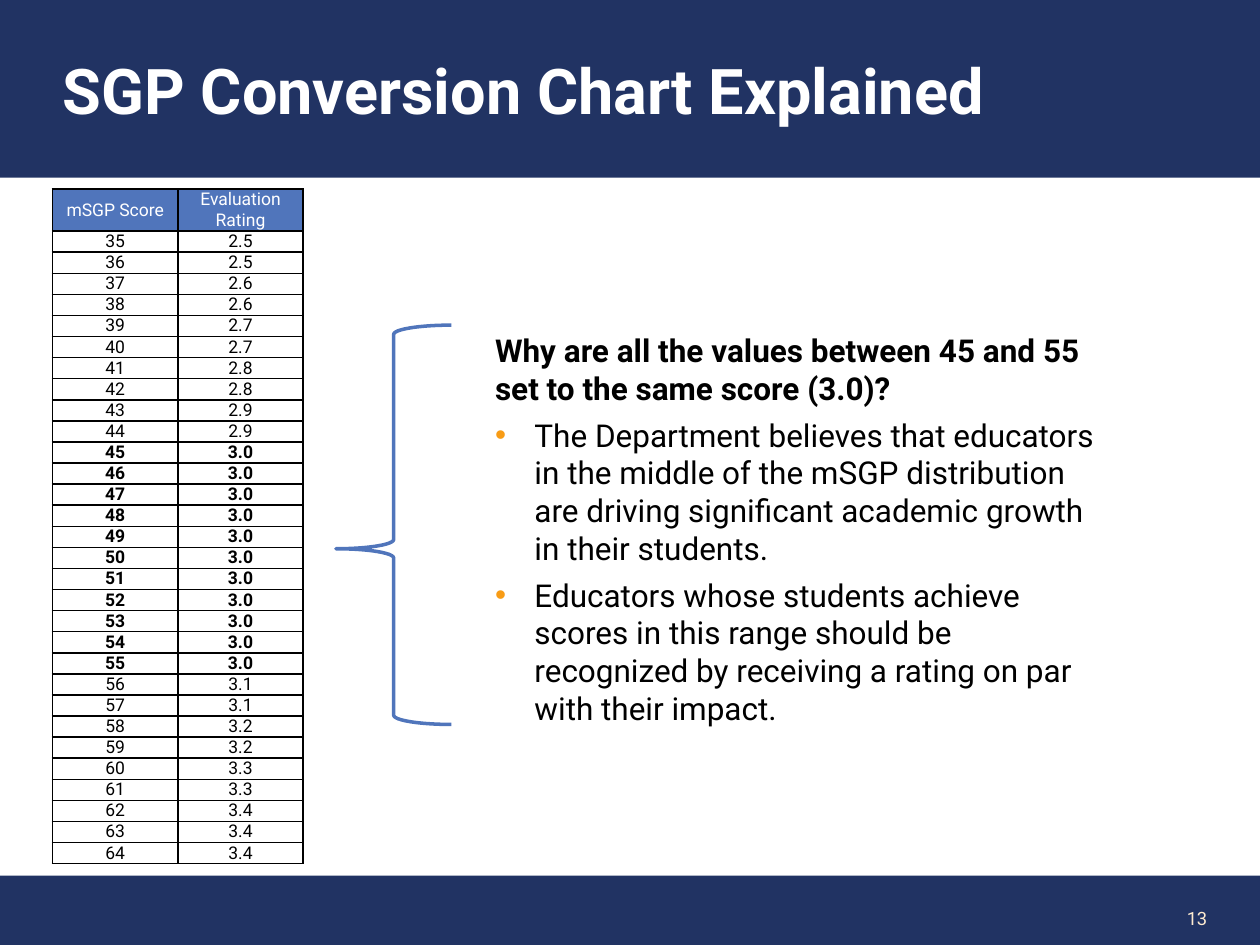
from pptx import Presentation
from pptx.dml.color import RGBColor
from pptx.enum.shapes import MSO_SHAPE
from pptx.enum.text import MSO_ANCHOR, PP_ALIGN
from pptx.oxml import parse_xml
from pptx.oxml.ns import nsdecls
from pptx.util import Pt

RECTANGLE, LEFT_BRACE = MSO_SHAPE.RECTANGLE, MSO_SHAPE.LEFT_BRACE
MIDDLE, TOP = MSO_ANCHOR.MIDDLE, MSO_ANCHOR.TOP
LEFT, CENTER, RIGHT = PP_ALIGN.LEFT, PP_ALIGN.CENTER, PP_ALIGN.RIGHT

FONT = "Roboto"
NAVY, BLUE, ORANGE, CREAM = "213363", "5075BB", "F89C15", "FEEBD0"
BLACK, WHITE = "000000", "FFFFFF"

FIRST_SCORE = 35
RATINGS = (["2.5"] * 2 + ["2.6"] * 2 + ["2.7"] * 2 + ["2.8"] * 2 + ["2.9"] * 2
           + ["3.0"] * 11 + ["3.1"] * 2 + ["3.2"] * 2 + ["3.3"] * 2 + ["3.4"] * 3)
QUESTION = "Why are all the values between 45 and 55 set to the same score (3.0)?"
ANSWERS = [
    "The Department believes that educators in the middle of the mSGP distribution "
    "are driving significant academic growth in their students.",
    "Educators whose students achieve scores in this range should be recognized by "
    "receiving a rating on par with their impact.",
]


def color(value):
    return RGBColor.from_string(value)


def points(box):
    return [Pt(length) for length in box]


def write(paragraph, text, size, fill=BLACK, bold=False, align=LEFT, before=0):
    paragraph.alignment = align
    paragraph.space_before = Pt(before)
    run = paragraph.add_run()
    run.text = text
    font = run.font
    font.name, font.size, font.bold = FONT, Pt(size), bold
    font.color.rgb = color(fill)


def add_bullet(paragraph, indent):
    properties = paragraph._p.get_or_add_pPr()
    properties.set("marL", str(Pt(indent)))
    properties.set("indent", str(-Pt(indent)))
    properties.append(parse_xml(
        f'<a:buClr {nsdecls("a")}><a:srgbClr val="{ORANGE}"/></a:buClr>'))
    properties.append(parse_xml(f'<a:buFont {nsdecls("a")} typeface="Arial"/>'))
    properties.append(parse_xml(f'<a:buChar {nsdecls("a")} char="•"/>'))


def add_borders(cell):
    properties = cell._tc.get_or_add_tcPr()
    for position, side in enumerate(("lnL", "lnR", "lnT", "lnB")):
        properties.insert(position, parse_xml(
            f'<a:{side} {nsdecls("a")} w="{Pt(1)}"><a:solidFill>'
            f'<a:srgbClr val="{BLACK}"/></a:solidFill></a:{side}>'))


def add_band(slide, box):
    band = slide.shapes.add_shape(RECTANGLE, *points(box))
    band.shadow.inherit = False
    band.fill.solid()
    band.fill.fore_color.rgb = color(NAVY)
    band.line.fill.background()
    return band


def add_text_box(slide, box, anchor=TOP):
    frame = slide.shapes.add_textbox(*points(box)).text_frame
    frame.word_wrap = True
    frame.vertical_anchor = anchor
    return frame


def add_title(slide, box):
    frame = add_band(slide, box).text_frame
    frame.word_wrap = True
    frame.vertical_anchor = MIDDLE
    frame.margin_left = Pt(36)
    write(frame.paragraphs[0], "SGP Conversion Chart Explained", 36, WHITE, bold=True)


def add_footer(slide, box):
    add_band(slide, box)
    frame = add_text_box(slide, (592, box[1] + 10, 105, 29), MIDDLE)
    write(frame.paragraphs[0], "13", 10.5, CREAM, align=RIGHT)


def add_score_table(slide, box):
    rows = [("mSGP Score", "Evaluation Rating")]
    rows += [(str(score), rating) for score, rating in enumerate(RATINGS, FIRST_SCORE)]
    table = slide.shapes.add_table(len(rows), 2, *points(box)).table
    row_height = box[3] / (len(rows) + 1)  # the header is two rows high
    for column in table.columns:
        column.width = Pt(box[2] / 2)
    for row_index, values in enumerate(rows):
        header = row_index == 0
        table.rows[row_index].height = Pt(row_height * (2 if header else 1))
        for column_index, value in enumerate(values):
            cell = table.cell(row_index, column_index)
            cell.margin_left = cell.margin_right = Pt(5)
            cell.margin_top = cell.margin_bottom = 0
            cell.vertical_anchor = MIDDLE
            if header:
                cell.fill.solid()
                cell.fill.fore_color.rgb = color(BLUE)
            else:
                cell.fill.background()
            add_borders(cell)
            write(cell.text_frame.paragraphs[0], value, 10, WHITE if header else BLACK,
                  bold=values[1] == "3.0", align=CENTER)


def add_brace(slide, box):
    brace = slide.shapes.add_shape(LEFT_BRACE, *points(box))
    brace.shadow.inherit = False
    brace.adjustments[0], brace.adjustments[1] = 0.08, 0.56
    brace.fill.background()
    brace.line.color.rgb = color(BLUE)
    brace.line.width = Pt(2)


def add_explanation(slide, box):
    frame = add_text_box(slide, box)
    write(frame.paragraphs[0], QUESTION, 18, bold=True)
    for answer in ANSWERS:
        paragraph = frame.add_paragraph()
        add_bullet(paragraph, 22.5)
        write(paragraph, answer, 18, before=5)


def main():
    presentation = Presentation()
    presentation.slide_width, presentation.slide_height = Pt(720), Pt(540)
    slide = presentation.slides.add_slide(presentation.slide_layouts[6])
    add_footer(slide, (0, 500.4, 721.4, 42.5))
    add_title(slide, (0, 0, 720, 101.5))
    add_score_table(slide, (30, 108, 143.3, 374.4))
    add_brace(slide, (192, 185.8, 66, 228.2))
    add_explanation(slide, (275.8, 185.8, 365.8, 230.4))
    presentation.save("out.pptx")


if __name__ == "__main__":
    main()
